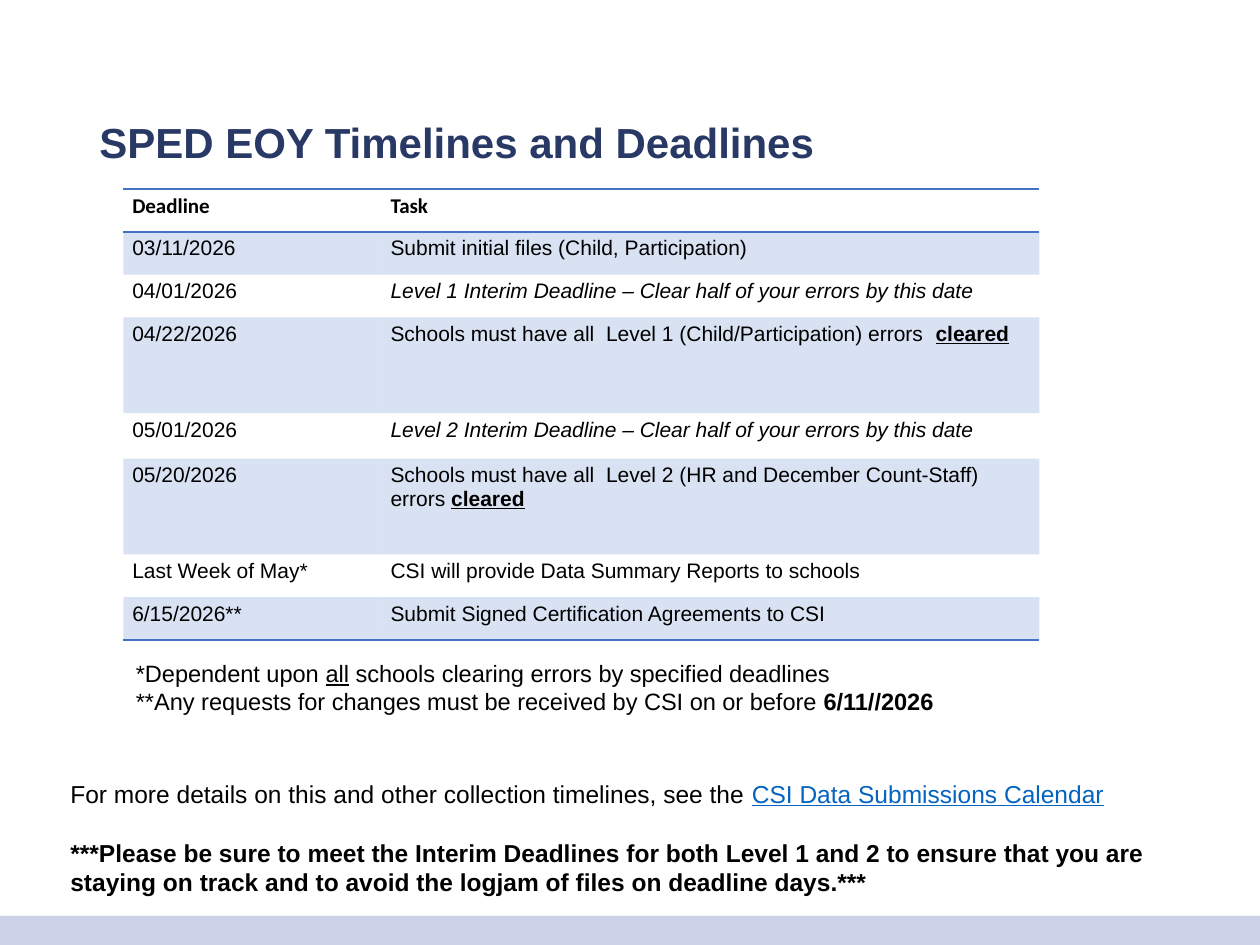
from lxml.etree import SubElement
from pptx import Presentation
from pptx.dml.color import RGBColor
from pptx.enum.shapes import MSO_SHAPE
from pptx.enum.text import MSO_ANCHOR
from pptx.oxml import parse_xml
from pptx.oxml.ns import nsdecls, qn
from pptx.util import Inches, Pt

NAVY = RGBColor(0x29, 0x39, 0x65)
LAVENDER = RGBColor(0xCB, 0xD1, 0xE7)
BLUE = RGBColor(0x44, 0x72, 0xC4)
LINK_BLUE = RGBColor(0x05, 0x63, 0xC1)
BLACK = RGBColor(0, 0, 0)

BODY = {"name": "Arial", "size": Pt(12)}
HEADER = {"name": "Calibri", "size": Pt(12), "bold": True}
FOOTNOTE = {"name": "Arial", "size": Pt(13.5)}
DETAIL = {"name": "Arial", "size": Pt(14)}
BOLD = {"bold": True}
ITALIC = {"italic": True}
UNDERLINE = {"underline": True}
CLEARED = ("cleared", BOLD | UNDERLINE)

NO_GRID_STYLE = "{2D5ABB26-0587-4C30-8999-92F81FD0307C}"
COLUMN_WIDTHS = (2.05, 5.22)
# Row height, deadline, runs of the task
SCHEDULE = [
    (0.34, "Deadline", [("Task", {})]),
    (0.34, "03/11/2026", [("Submit initial files (Child, Participation)", {})]),
    (0.34, "04/01/2026",
     [("Level 1 Interim Deadline – Clear half of your errors by this date", ITALIC)]),
    (0.76, "04/22/2026",
     [("Schools must have all  Level 1 (Child/Participation) errors  ", {}), CLEARED]),
    (0.36, "05/01/2026",
     [("Level 2 Interim Deadline – Clear half of your errors by this date", ITALIC)]),
    (0.76, "05/20/2026",
     [("Schools must have all  Level 2 (HR and December Count-Staff) errors ", {}), CLEARED]),
    (0.34, "Last Week of May*",
     [("CSI will provide Data Summary Reports to schools", {})]),
    (0.34, "6/15/2026**", [("Submit Signed Certification Agreements to CSI", {})]),
]

FOOTNOTES = [
    [("*Dependent upon ", {}), ("all", UNDERLINE),
     (" schools clearing errors by specified deadlines", {})],
    [("**Any requests for changes must be received by CSI on or before ", {}),
     ("6/11//2026", BOLD)],
]
DETAILS = [
    [("For more details on this and other collection timelines, see the ", {}),
     ("CSI Data Submissions Calendar", UNDERLINE | {"color": LINK_BLUE})],
    [("***Please be sure to meet the Interim Deadlines for both Level 1 and 2 to "
      "ensure that you are staying on track and to avoid the logjam of files on "
      "deadline days.***", BOLD)],
]


def add_runs(paragraph, runs, base):
    for text, changes in runs:
        run = paragraph.add_run()
        run.text = text
        look = {"color": BLACK} | base | changes
        run.font.color.rgb = look.pop("color")
        for attribute, value in look.items():
            setattr(run.font, attribute, value)


def add_text(slide, box, paragraphs, base, gap=0, anchor=MSO_ANCHOR.TOP):
    frame = slide.shapes.add_textbox(*map(Inches, box)).text_frame
    frame.word_wrap = True
    frame.vertical_anchor = anchor
    for index, runs in enumerate(paragraphs):
        paragraph = frame.add_paragraph() if index else frame.paragraphs[0]
        if index and gap:
            paragraph.space_before = Pt(gap)
        add_runs(paragraph, runs, base)


def add_rules(cell, sides):
    """Draw blue 1 pt borders on the given sides, "T" before "B"."""
    properties = cell._tc.get_or_add_tcPr()
    for position, side in enumerate(sides):
        properties.insert(position, parse_xml(
            f'<a:ln{side} {nsdecls("a")} w="{Pt(1)}"><a:solidFill>'
            f'<a:srgbClr val="{BLUE}"/></a:solidFill></a:ln{side}>'))


def shade(cell, is_band):
    if not is_band:
        cell.fill.background()
        return
    cell.fill.solid()
    cell.fill.fore_color.rgb = BLUE
    color = cell._tc.tcPr.find(qn("a:solidFill")).find(qn("a:srgbClr"))
    SubElement(color, qn("a:alpha"), val="20000")


def add_schedule(slide):
    heights = [height for height, _, _ in SCHEDULE]
    frame = slide.shapes.add_table(
        len(SCHEDULE), len(COLUMN_WIDTHS), Inches(0.98), Inches(1.5),
        Inches(sum(COLUMN_WIDTHS)), Inches(sum(heights)))
    table = frame.table
    table._tbl.tblPr.find(qn("a:tableStyleId")).text = NO_GRID_STYLE
    for column, width in zip(table.columns, COLUMN_WIDTHS):
        column.width = Inches(width)
    last = len(SCHEDULE) - 1
    for index, (height, deadline, task) in enumerate(SCHEDULE):
        table.rows[index].height = Inches(height)
        for cell, runs in zip(table.rows[index].cells, ([(deadline, {})], task)):
            cell.margin_left = cell.margin_right = Inches(0.07)
            cell.margin_top = cell.margin_bottom = Inches(0.04)
            add_runs(cell.text_frame.paragraphs[0], runs, BODY if index else HEADER)
            shade(cell, index % 2 == 1)
            add_rules(cell, {0: "TB", last: "B"}.get(index, ""))


def add_footer_band(slide):
    band = slide.shapes.add_shape(
        MSO_SHAPE.RECTANGLE, 0, Inches(7.27), Inches(10), Inches(0.23))
    band.shadow.inherit = False
    band.fill.solid()
    band.fill.fore_color.rgb = LAVENDER
    band.line.fill.background()


def main():
    deck = Presentation()
    deck.slide_width, deck.slide_height = Inches(10), Inches(7.5)
    slide = deck.slides.add_slide(deck.slide_layouts[6])
    add_text(slide, (0.69, 0.4, 8.62, 1.45),
             [[("SPED EOY Timelines and Deadlines", {})]],
             {"name": "Arial", "size": Pt(24), "bold": True, "color": NAVY},
             anchor=MSO_ANCHOR.MIDDLE)
    add_footer_band(slide)
    add_schedule(slide)
    add_text(slide, (0.98, 5.18, 6.65, 0.56), FOOTNOTES, FOOTNOTE)
    add_text(slide, (0.46, 6.13, 8.81, 1.04), DETAILS, DETAIL, gap=17)
    deck.save("out.pptx")


if __name__ == "__main__":
    main()
